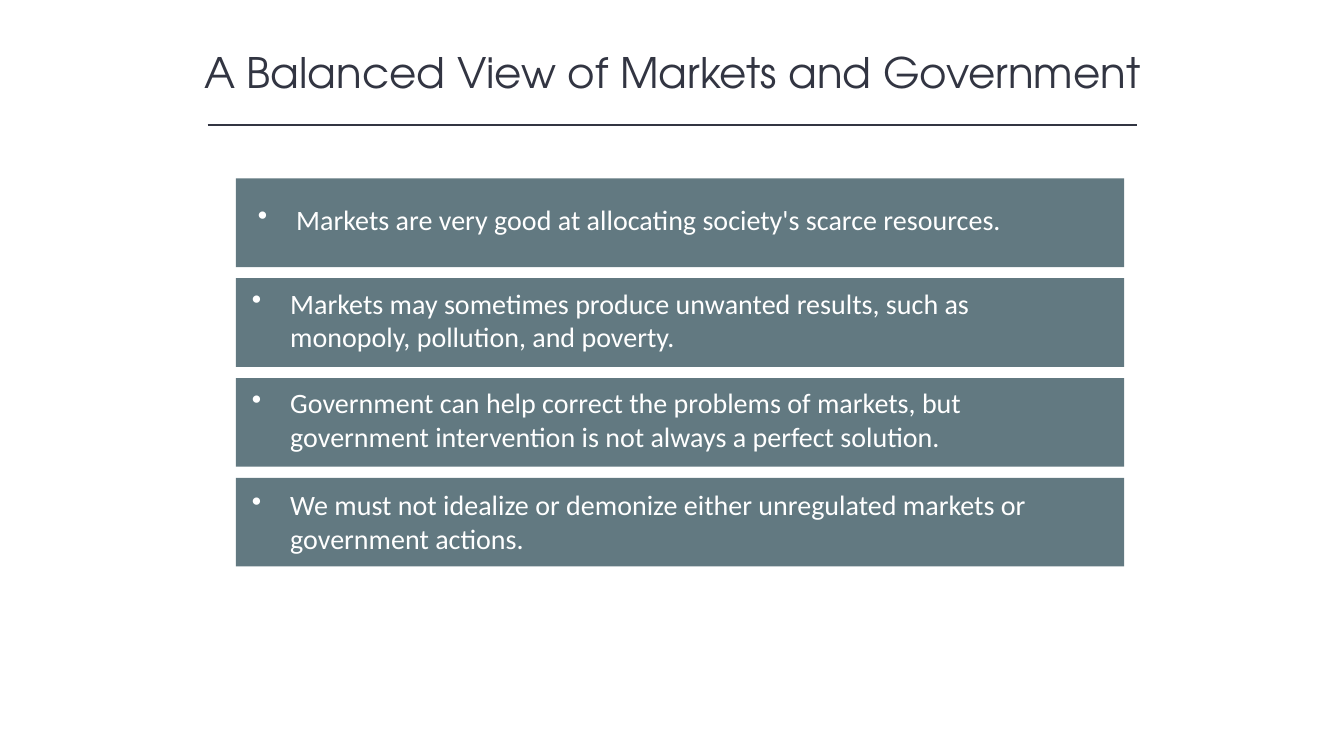
from dataclasses import dataclass

from lxml.etree import SubElement
from pptx import Presentation
from pptx.dml.color import RGBColor
from pptx.enum.shapes import MSO_CONNECTOR as Connector, MSO_SHAPE as Shape
from pptx.enum.text import MSO_ANCHOR as Anchor, PP_ALIGN as Align
from pptx.oxml.ns import qn
from pptx.util import Inches, Pt


@dataclass(frozen=True)
class Theme:
    ink: RGBColor = RGBColor(0x32, 0x35, 0x42)
    panel: RGBColor = RGBColor(0x62, 0x79, 0x81)
    light: RGBColor = RGBColor(0xFF, 0xFF, 0xFF)
    title_font: str = "TeX Gyre Adventor"
    body_font: str = "Calibri"
    title_size: float = 30
    body_size: float = 20
    rule_width: float = 1


@dataclass(frozen=True)
class Point:
    text: str
    inset_left: float = 0.06
    inset_top: float = 0.03
    height: float = 0.77


THEME = Theme()
PANEL_LEFT, PANEL_TOP, PANEL_WIDTH, PANEL_HEIGHT = 2.34, 1.77, 8.81, 0.88
PANEL_PITCH = 0.99
TEXT_WIDTH = 8.54
BULLET_INDENT = 0.38

POINTS = [
    Point("Markets are very good at allocating society's scarce resources.",
          inset_left=0.12, inset_top=0.19, height=0.44),
    Point("Markets may sometimes produce unwanted results, such as "
          "monopoly, pollution, and poverty."),
    Point("Government can help correct the problems of markets, but "
          "government intervention is not always a perfect solution."),
    Point("We must not idealize or demonize either unregulated markets or "
          "government actions.", inset_top=0.05),
]


def write_text(shape, text: str, *, font: str, size: float, color: RGBColor,
               align: Align = Align.LEFT, bullet: bool = False) -> None:
    frame = shape.text_frame
    frame.word_wrap = True
    frame.vertical_anchor = Anchor.TOP
    paragraph = frame.paragraphs[0]
    paragraph.text = text
    paragraph.alignment = align
    if bullet:
        properties = paragraph._p.get_or_add_pPr()
        properties.set("marL", str(Inches(BULLET_INDENT)))
        properties.set("indent", str(-Inches(BULLET_INDENT)))
        SubElement(properties, qn("a:buChar"), char="•")
    run_font = paragraph.runs[0].font
    run_font.name = font
    run_font.size = Pt(size)
    run_font.color.rgb = color


def add_panel(shapes, left: float, top: float, width: float, height: float):
    shape = shapes.add_shape(Shape.RECTANGLE, Inches(left), Inches(top),
                             Inches(width), Inches(height))
    shape.shadow.inherit = False
    shape.fill.solid()
    shape.fill.fore_color.rgb = THEME.panel
    shape.line.fill.background()
    return shape


def add_point(slide, point: Point, top: float) -> None:
    shapes = slide.shapes.add_group_shape().shapes
    add_panel(shapes, PANEL_LEFT, top, PANEL_WIDTH, PANEL_HEIGHT)
    label = add_panel(shapes, PANEL_LEFT + point.inset_left, top + point.inset_top,
                      TEXT_WIDTH, point.height)
    write_text(label, point.text, font=THEME.body_font, size=THEME.body_size,
               color=THEME.light, bullet=True)


def add_heading(slide) -> None:
    title = slide.shapes.add_textbox(Inches(1.67), Inches(0.41), Inches(10), Inches(0.61))
    write_text(title, "A Balanced View of Markets and Government", font=THEME.title_font,
               size=THEME.title_size, color=THEME.ink, align=Align.CENTER)
    rule = slide.shapes.add_connector(Connector.STRAIGHT, Inches(2.06), Inches(1.24),
                                      Inches(11.28), Inches(1.24))
    rule.line.color.rgb = THEME.ink
    rule.line.width = Pt(THEME.rule_width)
    SubElement(rule._element.spPr, qn("a:effectLst"))


def main() -> None:
    presentation = Presentation()
    presentation.slide_width = Inches(13.33)
    presentation.slide_height = Inches(7.5)
    slide = presentation.slides.add_slide(presentation.slide_layouts[6])

    # Title and the rule under it
    add_heading(slide)

    # Stack of bulleted panels
    for index, point in enumerate(POINTS):
        add_point(slide, point, PANEL_TOP + index * PANEL_PITCH)

    presentation.save("out.pptx")


if __name__ == "__main__":
    main()
